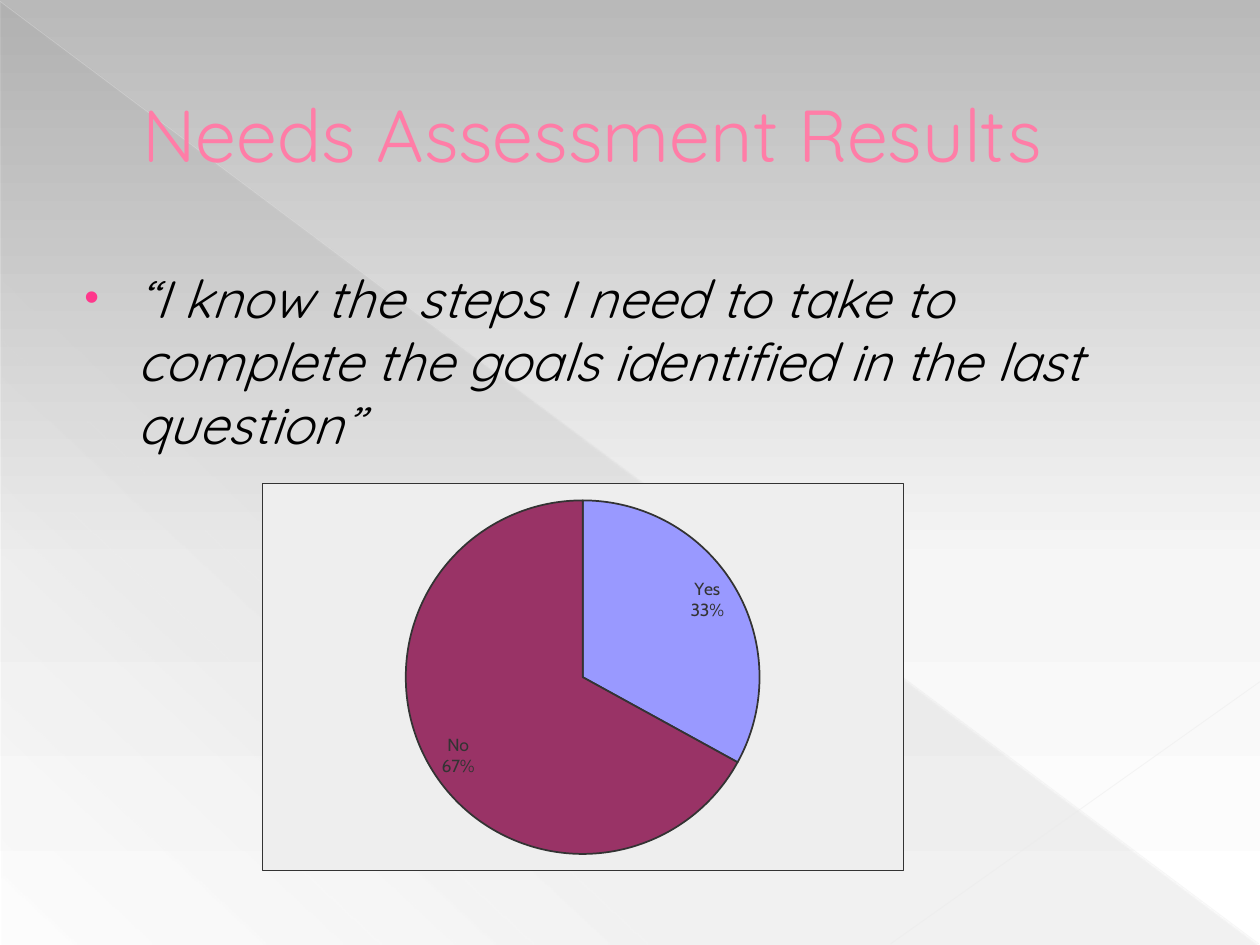
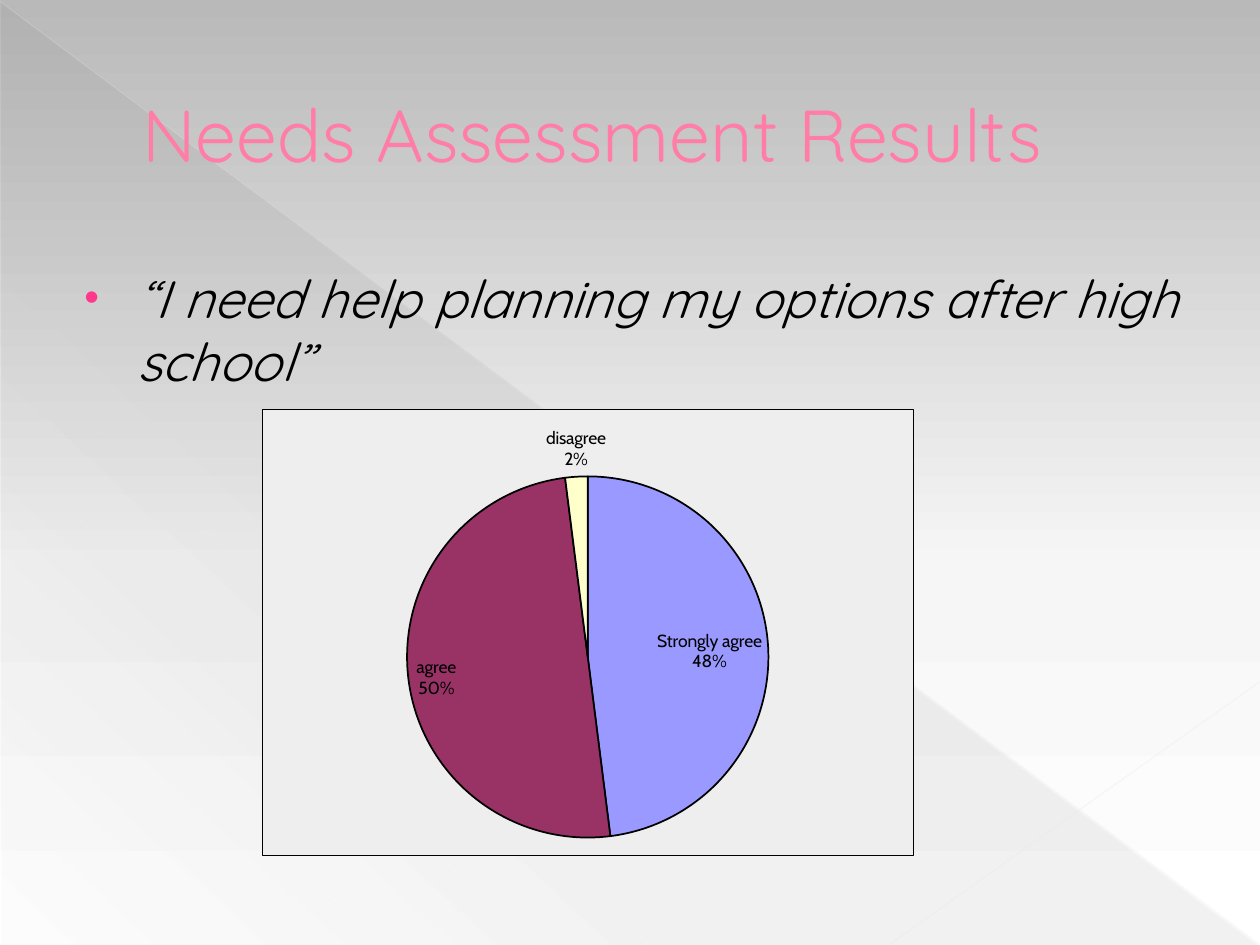
from lxml.etree import SubElement
from pptx import Presentation
from pptx.chart.data import CategoryChartData
from pptx.dml.color import RGBColor
from pptx.enum.chart import XL_CHART_TYPE, XL_LABEL_POSITION
from pptx.enum.shapes import MSO_CONNECTOR, MSO_SHAPE
from pptx.enum.text import MSO_ANCHOR, MSO_AUTO_SIZE, PP_ALIGN
from pptx.oxml import parse_xml
from pptx.oxml.ns import nsdecls, qn
from pptx.util import Inches, Pt

COLORS = {
    "title": "FF7DA7",
    "title_outline": "B12761",
    "bullet": "FF388C",
    "text": "000000",
    "chart_panel": "EEEEEE",
    "triangle": "666666",
    "diagonal": "E8E8E8",
    "corner_line": "EAEAEA",
}
BACKGROUND_STOPS = [(0, "B9B9B9", 100), (60, "F6F6F6", 100), (100, "FFFFFF", 100)]
TRIANGLE_STOPS = [(position, COLORS["triangle"], opacity)
                  for position, opacity in ((0, 10), (70, 8), (100, 1))]
SLICE_COLORS = ["9999FF", "993366", "FFFFCC", "CCFFFF"]
HEADING_FONT = "Quicksand"
CHART_FONT = "Cabin"


def rgb(color):
    return RGBColor.from_string(color)


def inches(*lengths):
    return [Inches(length) for length in lengths]


def place(shape, *box):
    shape.left, shape.top, shape.width, shape.height = inches(*box)


def set_opacity(color_element, opacity):
    if opacity < 100:
        SubElement(color_element, qn("a:alpha"), val=str(opacity * 1000))


def set_gradient(fill, owner, stops, angle):
    """Give owner's fill a gradient of (position, color, opacity) percent stops."""
    fill.gradient()
    fill.gradient_angle = 360 - angle
    stop_list = owner.find(".//" + qn("a:gsLst"))
    for old_stop in list(stop_list):
        stop_list.remove(old_stop)
    for position, color, opacity in stops:
        stop = SubElement(stop_list, qn("a:gs"), pos=str(position * 1000))
        set_opacity(SubElement(stop, qn("a:srgbClr"), val=color), opacity)


def add_line(slide, start, end, color, width, opacity):
    line = slide.shapes.add_connector(MSO_CONNECTOR.STRAIGHT, *inches(*start, *end))
    line.line.color.rgb = rgb(color)
    line.line.width = Pt(width)
    set_opacity(line.element.spPr.find(".//" + qn("a:srgbClr")), opacity)
    SubElement(line.element.spPr, qn("a:effectLst"))
    return line


def add_triangle(slide):
    triangle = slide.shapes.add_shape(MSO_SHAPE.RIGHT_TRIANGLE, *inches(0.01, 0.02, 9.98, 7.48))
    triangle.shadow.inherit = False
    triangle.line.fill.background()
    set_gradient(triangle.fill, triangle.element, TRIANGLE_STOPS, 133)
    return triangle


def decorate_master(master, slide):
    """Build the shared backdrop on a slide, then move it behind the master's placeholders."""
    set_gradient(master.background.fill, master.element, BACKGROUND_STOPS, 90)
    backdrop = [
        add_triangle(slide),
        add_line(slide, (0, 0.01), (9.99, 7.49), COLORS["diagonal"], 0.39, 35),
        add_line(slide, (10, 5.41), (7.07, 7.49), COLORS["corner_line"], 0.47, 45),
    ]
    for index, shape in enumerate(backdrop):
        shape.element.find(".//" + qn("p:cNvPr")).set("id", str(100 + index))
        master.shapes.element.insert(2 + index, shape.element)


def set_indent(paragraph, margin, first_line):
    properties = paragraph._p.get_or_add_pPr()
    properties.set("marL", str(Inches(margin)))
    properties.set("indent", str(Inches(first_line)))
    return properties


def fill_placeholder(placeholder, text, size, color, anchor):
    frame = placeholder.text_frame
    frame.text = text
    frame.word_wrap = True
    frame.auto_size = MSO_AUTO_SIZE.NONE
    frame.vertical_anchor = anchor
    paragraph = frame.paragraphs[0]
    paragraph.alignment = PP_ALIGN.LEFT
    font = paragraph.runs[0].font
    font.name, font.size = HEADING_FONT, Pt(size)
    font.color.rgb = rgb(color)
    return paragraph


def add_title(slide, text):
    place(slide.shapes.title, 0.5, 0.29, 9, 1.53)
    paragraph = fill_placeholder(slide.shapes.title, text, 42, COLORS["title"], MSO_ANCHOR.MIDDLE)
    set_indent(paragraph, 0.53, 0)
    paragraph.runs[0].font._element.insert(0, parse_xml(
        f'<a:ln {nsdecls("a")} w="{Pt(0.5)}"><a:solidFill>'
        f'<a:srgbClr val="{COLORS["title_outline"]}"/></a:solidFill></a:ln>'))


def add_statement(slide, text):
    body = slide.placeholders[1]
    place(body, 0.5, 2.06, 9, 5)
    paragraph = fill_placeholder(body, text, 30, COLORS["text"], MSO_ANCHOR.TOP)
    paragraph.runs[0].font.italic = True
    properties = set_indent(paragraph, 0.49, -0.42)
    spacing = SubElement(properties, qn("a:spcBef"))
    SubElement(spacing, qn("a:spcPct"), val="20000")
    bullet_color = SubElement(properties, qn("a:buClr"))
    SubElement(bullet_color, qn("a:srgbClr"), val=COLORS["bullet"])
    SubElement(properties, qn("a:buSzPct"), val="80000")
    SubElement(properties, qn("a:buFont"), typeface="Arial")
    SubElement(properties, qn("a:buChar"), char="•")


def frame_chart(chart, color):
    chart.element.find(qn("c:chart")).addnext(parse_xml(
        f'<c:spPr {nsdecls("c", "a")}><a:solidFill><a:srgbClr val="{COLORS["chart_panel"]}"/>'
        f'</a:solidFill><a:ln w="{Pt(0.25)}"><a:solidFill><a:srgbClr val="{color}"/>'
        f'</a:solidFill></a:ln></c:spPr>'))


def position_pie(chart, width, height, pie_top, diameter):
    """Centre the pie across the chart, pie_top inches below its upper edge."""
    plot_area = chart.element.find(".//" + qn("c:plotArea"))
    for old_layout in plot_area.findall(qn("c:layout")):
        plot_area.remove(old_layout)
    layout = SubElement(plot_area, qn("c:layout"))
    plot_area.insert(0, layout)
    manual = SubElement(layout, qn("c:manualLayout"))
    settings = {
        "layoutTarget": "inner", "xMode": "edge", "yMode": "edge",
        "x": (width - diameter) / 2 / width, "y": pie_top / height,
        "w": diameter / width, "h": diameter / height,
    }
    for name, value in settings.items():
        SubElement(manual, qn("c:" + name), val=str(value))


def label_slices(series, values):
    labels = series.data_labels
    labels.show_value = False
    labels.show_category_name = True
    labels.show_percentage = True
    labels.number_format = "0%"
    labels.number_format_is_linked = False
    labels.position = XL_LABEL_POSITION.BEST_FIT
    element = labels._element
    separator = parse_xml(f'<c:separator {nsdecls("c")}>\n</c:separator>')
    element.find(qn("c:showBubbleSize")).addnext(separator)
    empty_slices = [index for index, value in enumerate(values) if value == 0]
    for position, index in enumerate(empty_slices):
        element.insert(position, parse_xml(
            f'<c:dLbl {nsdecls("c")}><c:idx val="{index}"/><c:delete val="1"/></c:dLbl>'))


def add_pie(slide, answers, box, pie_top, diameter, color):
    data = CategoryChartData()
    data.categories = list(answers)
    data.add_series("Series 1", list(answers.values()))
    chart = slide.shapes.add_chart(XL_CHART_TYPE.PIE, *inches(*box), data).chart
    chart.has_title = False
    chart.has_legend = False
    chart.font.name, chart.font.size = CHART_FONT, Pt(10)
    chart.font.color.rgb = rgb(color)
    frame_chart(chart, color)
    position_pie(chart, box[2], box[3], pie_top, diameter)
    plot = chart.plots[0]
    plot.vary_by_categories = True
    series = plot.series[0]
    for index, slice_color in enumerate(SLICE_COLORS[:len(answers)]):
        slice_format = series.points[index].format
        slice_format.fill.solid()
        slice_format.fill.fore_color.rgb = rgb(slice_color)
        slice_format.line.color.rgb = rgb(color)
        slice_format.line.width = Pt(1)
    label_slices(series, answers.values())


def add_result_slide(presentation, statement):
    slide = presentation.slides.add_slide(presentation.slide_layouts[1])
    add_title(slide, "Needs Assessment Results")
    add_statement(slide, statement)
    return slide


def main():
    presentation = Presentation()
    presentation.slide_width, presentation.slide_height = inches(10, 7.5)

    steps = add_result_slide(
        presentation,
        "“I know the steps I need to take to complete the goals identified in the last question”")
    decorate_master(presentation.slide_master, steps)
    add_pie(steps, {"Yes": 33, "No": 67},
            (2.08, 3.83, 5.09, 3.08), pie_top=0.14, diameter=2.81, color="333333")

    options = add_result_slide(
        presentation, "“I need help planning my options after high school”")
    add_pie(options,
            {"Strongly agree": 48, "agree": 50, "disagree": 2, "strongly disagree": 0},
            (2.08, 3.25, 5.17, 3.54), pie_top=0.53, diameter=2.87, color="000000")

    presentation.save("out.pptx")


if __name__ == "__main__":
    main()
